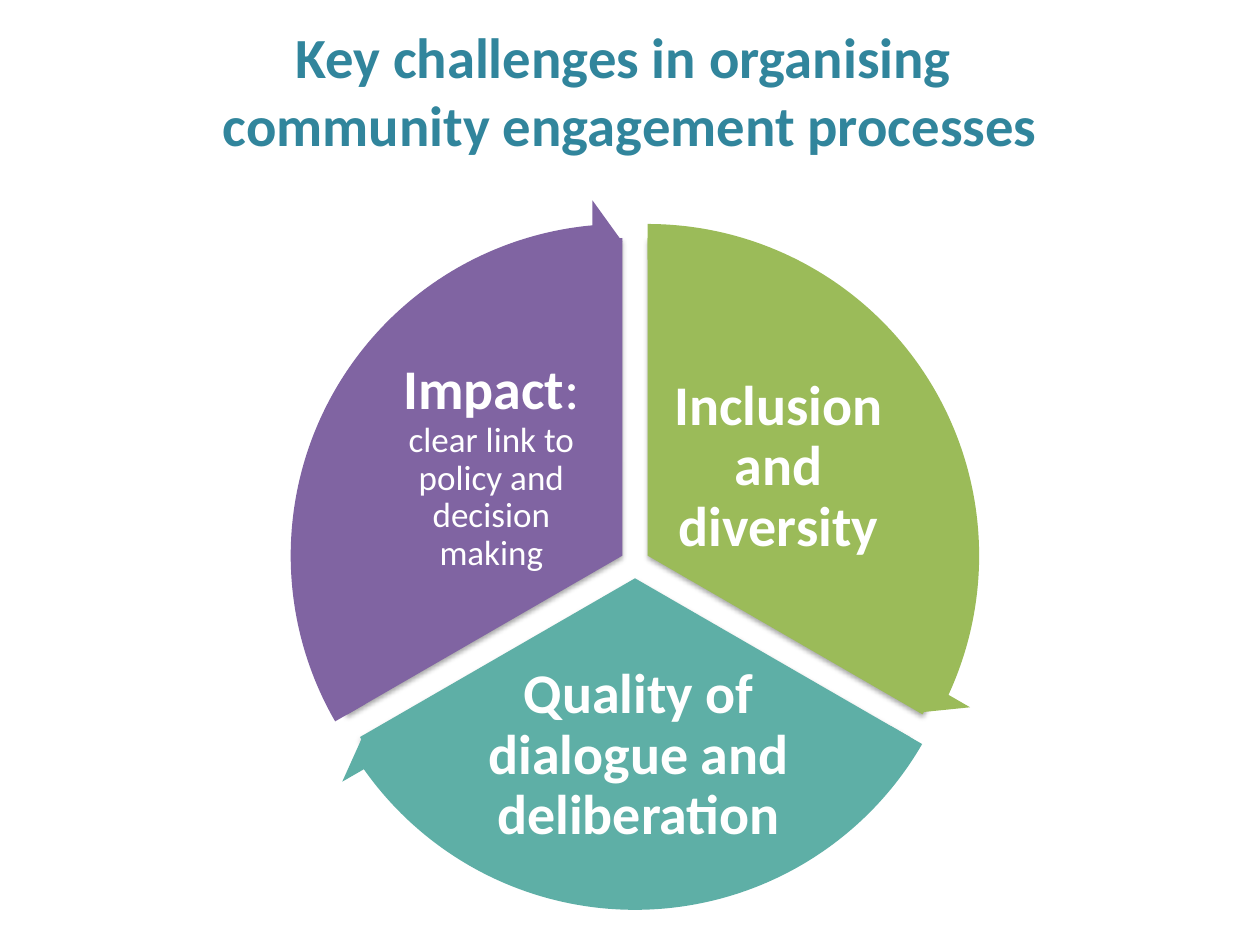
from dataclasses import dataclass

from lxml.etree import SubElement
from pptx import Presentation
from pptx.dml.color import RGBColor
from pptx.enum.shapes import MSO_SHAPE
from pptx.enum.text import MSO_ANCHOR, PP_ALIGN
from pptx.oxml.ns import qn
from pptx.util import Inches, Pt


@dataclass(frozen=True)
class Theme:
    font: str = "Calibri"
    title: str = "31859C"
    label: str = "FFFFFF"
    green: str = "9BBB59"
    teal: str = "5EAFA6"
    purple: str = "8064A2"
    title_size: float = 32.4
    head_size: float = 32
    detail_size: float = 20


@dataclass(frozen=True)
class Run:
    text: str
    size: float
    color: str
    bold: bool = True


@dataclass(frozen=True)
class Sector:
    color: str
    center: tuple[float, float]
    start: int
    label_box: tuple[float, float, float, float]
    runs: tuple[Run, ...]


THEME = Theme()
PIE_SIZE = 5.04
ARROW_SIZE = 5.66
SWEEP = 120
HEAD_ANGLE = 5.46
ARROW_WIDTH = 0.05
HEAD_WIDTH = 0.06


def head(text: str, bold: bool = True) -> Run:
    return Run(text, THEME.head_size, THEME.label, bold)


SECTORS = [
    Sector(THEME.green, (5.14, 4.41), 270, (5.28, 2.96, 1.8, 1.5),
           (head("Inclusion and diversity"),)),
    Sector(THEME.teal, (5.04, 4.59), 30, (3.72, 5.34, 2.7, 1.32),
           (head("Quality of dialogue and deliberation"),)),
    Sector(THEME.purple, (4.94, 4.41), 150, (3, 2.96, 1.8, 1.5),
           (head("Impact"), head(": ", bold=False),
            Run("clear link to policy and decision making",
                THEME.detail_size, THEME.label, False))),
]


def angle(degrees: float) -> float:
    """Convert degrees to a normalised shape adjustment."""
    return degrees % 360 * 60000 / 100000


def add_round_shape(s, kind: MSO_SHAPE, sector: Sector, size: float,
                    adjustments: list[float]):
    """Add a filled, unlined shape centred on the sector's centre."""
    x, y = sector.center
    sp = s.shapes.add_shape(kind, Inches(x - size / 2), Inches(y - size / 2),
                            Inches(size), Inches(size))
    for i, value in enumerate(adjustments):
        sp.adjustments[i] = value
    sp.fill.solid()
    sp.fill.fore_color.rgb = RGBColor.from_string(sector.color)
    sp.line.fill.background()
    sp.shadow.inherit = False
    return sp


def add_soft_shadow(sp) -> None:
    effects = sp._element.spPr.find(qn("a:effectLst"))
    shadow = SubElement(effects, qn("a:outerShdw"), blurRad=str(Pt(3.1)),
                        dist=str(Pt(1.8)), dir=str(90 * 60000), rotWithShape="0")
    color = SubElement(shadow, qn("a:srgbClr"), val="000000")
    SubElement(color, qn("a:alpha"), val="35000")


def add_text(s, box: tuple[float, float, float, float], runs: tuple[Run, ...],
             inset: float, line_spacing: float) -> None:
    tf = s.shapes.add_textbox(*map(Inches, box)).text_frame
    tf.word_wrap = True
    tf.vertical_anchor = MSO_ANCHOR.MIDDLE
    tf.margin_left = tf.margin_right = Inches(inset)
    tf.margin_top = tf.margin_bottom = Inches(0.04)
    p = tf.paragraphs[0]
    p.text = "".join(run.text for run in runs) if len(runs) == 1 else ""
    if len(runs) > 1:
        for run in runs:
            p.add_run().text = run.text
    p.alignment = PP_ALIGN.CENTER
    p.line_spacing = line_spacing
    for i, r in enumerate(p.runs):
        style = runs[min(i, len(runs) - 1)]
        r.font.name = THEME.font
        r.font.size = Pt(style.size)
        r.font.bold = style.bold
        r.font.color.rgb = RGBColor.from_string(style.color)


def add_sector(s, sector: Sector) -> None:
    pie = add_round_shape(s, MSO_SHAPE.PIE, sector, PIE_SIZE,
                          [angle(sector.start), angle(sector.start + SWEEP)])
    add_soft_shadow(pie)
    add_text(s, sector.label_box, sector.runs, inset=0.04, line_spacing=0.9)


def add_rim_arrow(s, sector: Sector) -> None:
    end = sector.start + SWEEP - HEAD_ANGLE
    add_round_shape(s, MSO_SHAPE.CIRCULAR_ARROW, sector, ARROW_SIZE,
                    [ARROW_WIDTH, angle(HEAD_ANGLE), angle(end),
                     angle(sector.start), HEAD_WIDTH])


def main() -> None:
    prs = Presentation()
    prs.slide_width, prs.slide_height = Inches(10), Inches(7.5)
    s = prs.slides.add_slide(prs.slide_layouts[6])
    title = Run("Key challenges in organising \vcommunity engagement processes",
                THEME.title_size, THEME.title)
    add_text(s, (0.5, 0.17, 9, 1.08), (title,), inset=0.1, line_spacing=1)
    for sector in SECTORS:
        add_sector(s, sector)
    for sector in SECTORS:
        add_rim_arrow(s, sector)
    prs.save("out.pptx")


if __name__ == "__main__":
    main()
